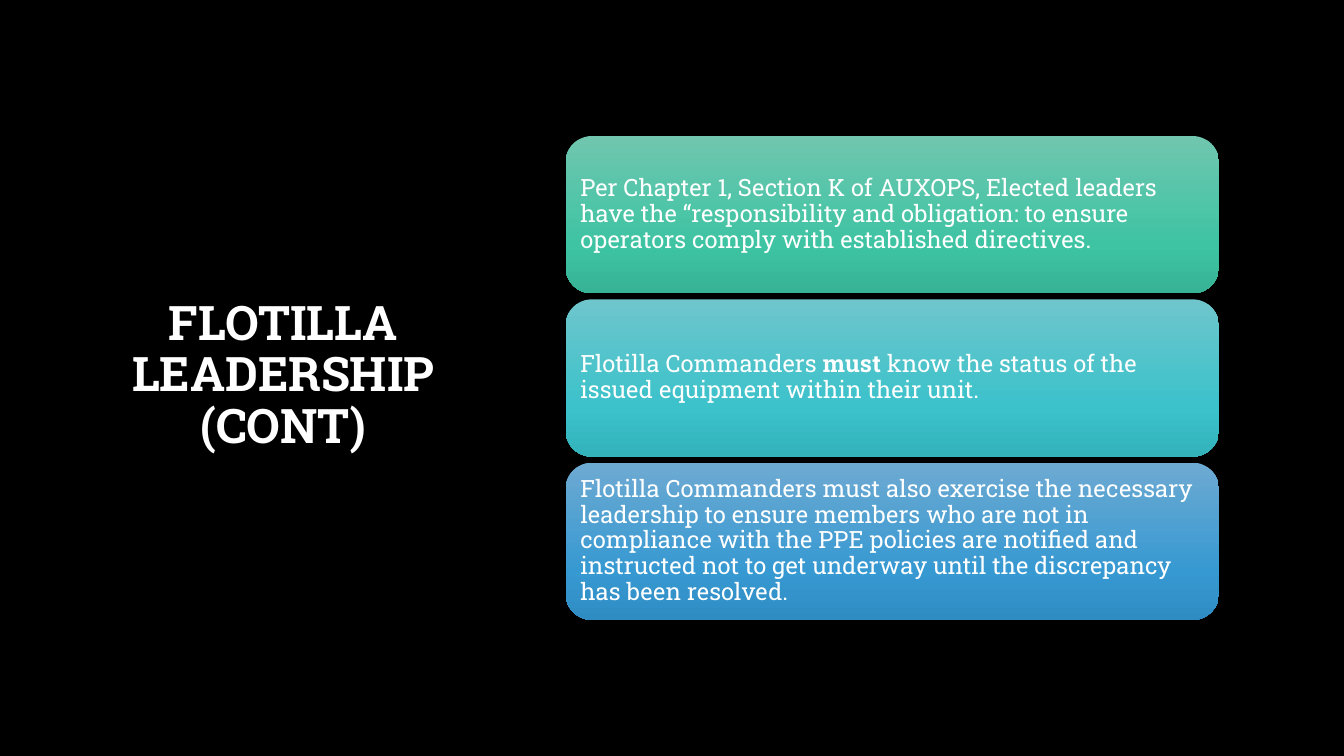
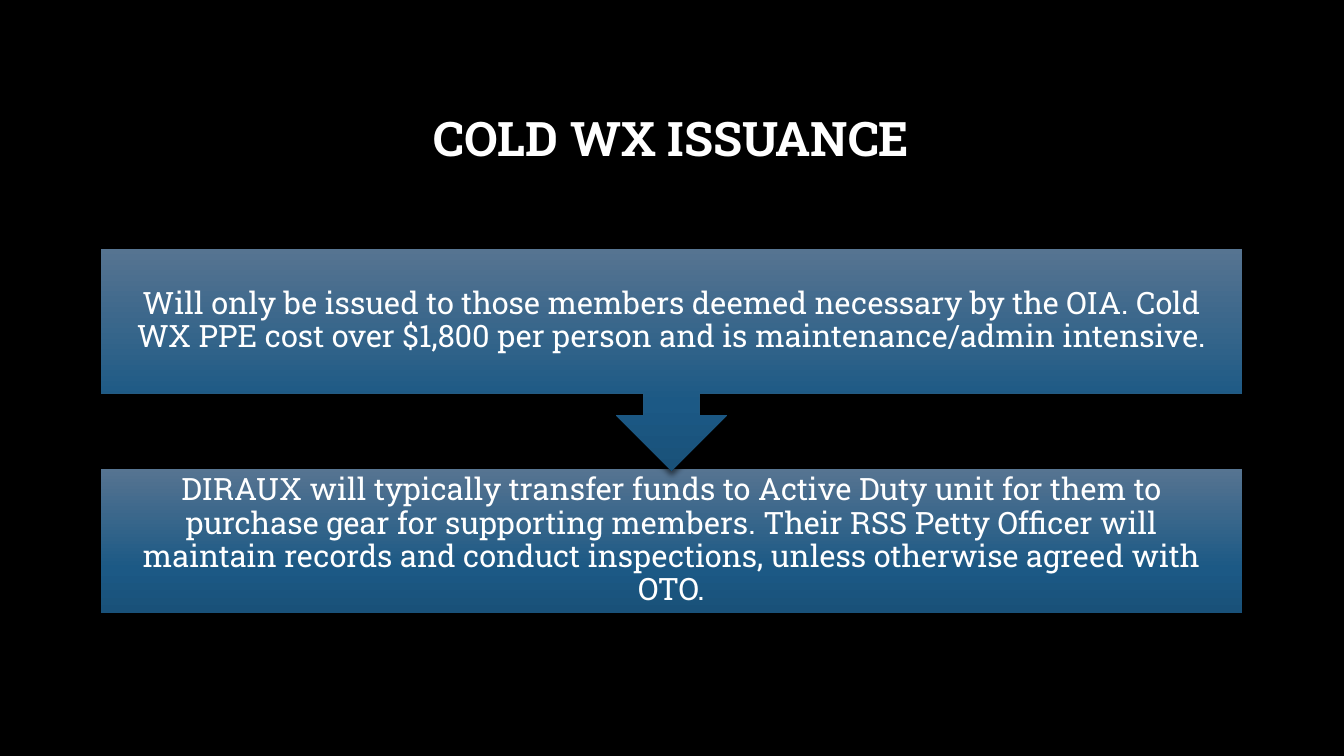
import copy

import pptx
import pptx.dml.color
import pptx.enum.shapes
import pptx.enum.text
import pptx.oxml
import pptx.oxml.ns
import pptx.util

RGB = pptx.dml.color.RGBColor
SHAPE = pptx.enum.shapes.MSO_SHAPE
ALIGN = pptx.enum.text.PP_ALIGN

EMU_PER_PX = 9144  # 100 px to the inch
PAGE_SIZE = (1333, 750)
FONT = "Roboto Slab"
BLACK = RGB(0x00, 0x00, 0x00)
WHITE = RGB(0xFF, 0xFF, 0xFF)

# Each gradient runs from top to bottom through these positions.
STOPS = (0, 0.69, 1)
GREEN = (RGB(0x70, 0xC6, 0xAF), RGB(0x3E, 0xC4, 0xA3), RGB(0x37, 0xB3, 0x95))
TEAL = (RGB(0x6E, 0xC6, 0xCC), RGB(0x3B, 0xC2, 0xCB), RGB(0x33, 0xB2, 0xBA))
BLUE = (RGB(0x6D, 0xAA, 0xD2), RGB(0x37, 0x99, 0xD2), RGB(0x2F, 0x8C, 0xC2))
NAVY = (RGB(0x56, 0x74, 0x91), RGB(0x1C, 0x59, 0x85), RGB(0x19, 0x51, 0x79))

SHADOW = (
    '<a:outerShdw xmlns:a="http://schemas.openxmlformats.org/drawingml/2006/main"'
    ' blurRad="50800" dist="38100" dir="5400000" rotWithShape="0">'
    f'<a:srgbClr val="{BLACK}"><a:alpha val="54000"/></a:srgbClr></a:outerShdw>'
)


def px(*lengths):
    return [pptx.util.Emu(length * EMU_PER_PX) for length in lengths]


class Deck:
    def __init__(self):
        self.deck = pptx.Presentation()
        self.deck.slide_width, self.deck.slide_height = px(*PAGE_SIZE)
        self.page = None

    def add_page(self):
        self.page = self.deck.slides.add_slide(self.deck.slide_layouts[6])
        self.page.background.fill.solid()
        self.page.background.fill.fore_color.rgb = BLACK

    def set_text(self, box, spans, size, align, bold=False):
        """Fill a box with one paragraph of (text, bold) spans or plain text."""
        frame = box.text_frame
        frame.word_wrap = True
        frame.vertical_anchor = pptx.enum.text.MSO_ANCHOR.MIDDLE
        para = frame.paragraphs[0]
        para.alignment = align
        para.line_spacing = 0.9
        para.font.name = FONT
        para.font.size = pptx.util.Pt(size)
        para.font.bold = bold
        para.font.color.rgb = WHITE
        if isinstance(spans, str):
            spans = [(spans, None)]
        for text, emphasis in spans:
            span = para.add_run()
            span.text = text
            span.font.bold = emphasis

    def title(self, text, *bounds):
        box = self.page.shapes.add_textbox(*px(*bounds))
        self.set_text(box, text, 34, ALIGN.CENTER, bold=True)

    def panel(self, kind, bounds, colors, spans, size, align, inset):
        """Add a gradient shape with a soft shadow and text inside."""
        shape = self.page.shapes.add_shape(kind, *px(*bounds))
        shape.line.fill.background()
        self.gradient(shape, colors)
        shape.shadow.inherit = False
        effects = shape.element.spPr.find(pptx.oxml.ns.qn("a:effectLst"))
        effects.append(pptx.oxml.parse_xml(SHADOW))
        frame = shape.text_frame
        frame.margin_left, frame.margin_top = px(inset, inset)
        frame.margin_right, frame.margin_bottom = px(inset, inset)
        self.set_text(shape, spans, size, align)

    def gradient(self, shape, colors):
        fill = shape.fill
        fill.gradient()
        fill.gradient_angle = 270
        stop_list = next(shape.element.spPr.iter(pptx.oxml.ns.qn("a:gsLst")))
        stop_list.append(copy.deepcopy(stop_list[0]))
        for stop, position, color in zip(fill.gradient_stops, STOPS, colors):
            stop.position = position
            stop.color.rgb = color

    def save(self):
        self.deck.save("out.pptx")


def leadership_page(deck):
    deck.add_page()
    deck.title("FLOTILLA LEADERSHIP (CONT)", 82, 67, 398, 613)
    duties = [
        (GREEN, "Per Chapter 1, Section K of AUXOPS, Elected leaders have the "
                "“responsibility and obligation: to ensure operators comply "
                "with established directives."),
        (TEAL, [("Flotilla Commanders ", None), ("must ", True),
                ("know the status of the issued equipment within their unit.", None)]),
        (BLUE, "Flotilla Commanders must also exercise the necessary leadership "
               "to ensure members who are not in compliance with the PPE policies "
               "are notified and instructed not to get underway until the "
               "discrepancy has been resolved."),
    ]
    for row, (colors, spans) in enumerate(duties):
        bounds = (561, 135 + 162 * row, 648, 156)
        deck.panel(SHAPE.ROUNDED_RECTANGLE, bounds, colors, spans, 17, ALIGN.LEFT, 7)


def issuance_page(deck):
    deck.add_page()
    left, width = 100, 1132
    deck.title("COLD WX ISSUANCE", left, 67, width, 145)
    # The callout comes last so that its arrow tip lies over the lower box.
    steps = [
        (SHAPE.RECTANGLE, 465, 143,
         "DIRAUX will typically transfer funds to Active Duty unit for them to "
         "purchase gear for supporting members. Their RSS Petty Officer will "
         "maintain records and conduct inspections, unless otherwise agreed with OTO."),
        (SHAPE.DOWN_ARROW_CALLOUT, 247, 220,
         "Will only be issued to those members deemed necessary by the OIA. Cold "
         "WX PPE cost over $1,800 per person and is maintenance/admin intensive."),
    ]
    for kind, top, height, text in steps:
        bounds = (left, top, width, height)
        deck.panel(kind, bounds, NAVY, text, 22, ALIGN.CENTER, 17)


def main():
    deck = Deck()
    leadership_page(deck)
    issuance_page(deck)
    deck.save()


if __name__ == "__main__":
    main()
